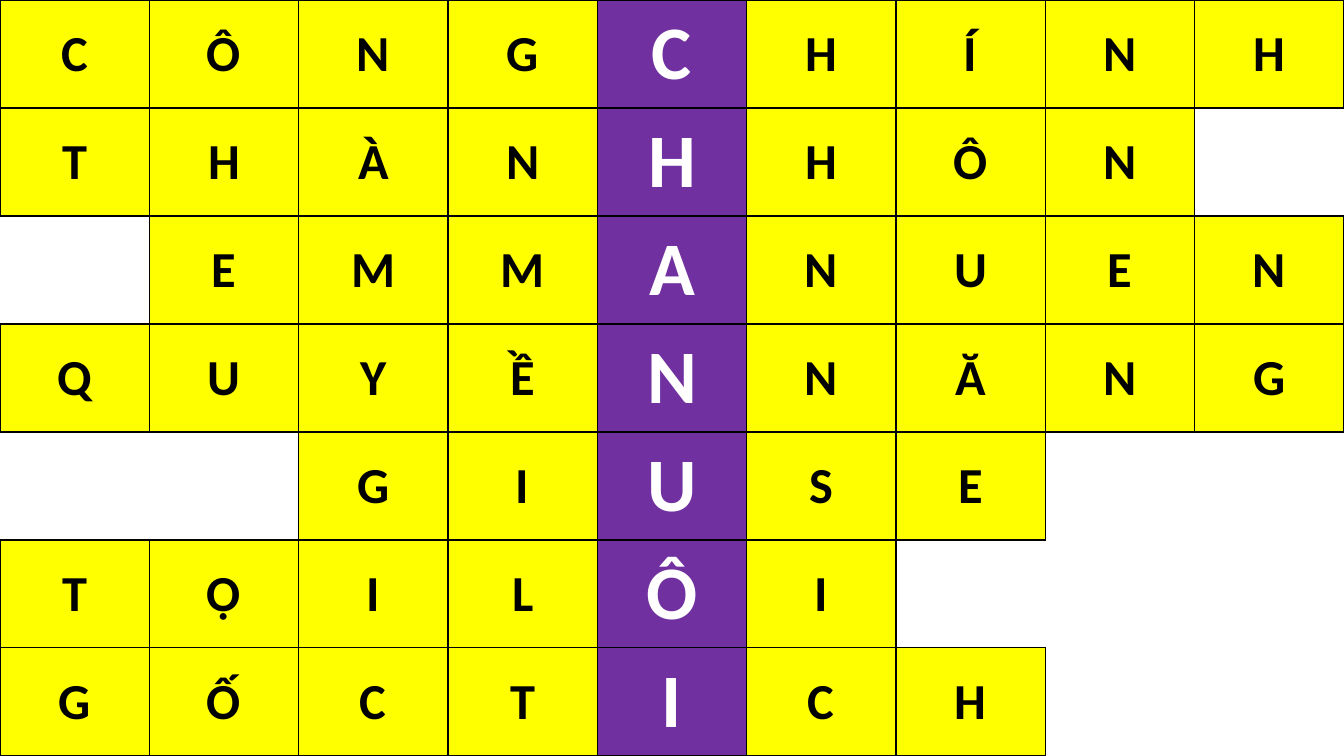
from lxml import etree
from pptx import Presentation
from pptx.dml.color import RGBColor
from pptx.enum.text import MSO_ANCHOR, PP_ALIGN
from pptx.oxml.ns import qn
from pptx.util import Inches, Pt

BLACK = RGBColor(0x00, 0x00, 0x00)
WHITE = RGBColor(0xFF, 0xFF, 0xFF)
YELLOW = RGBColor(0xFF, 0xFF, 0x00)
PURPLE = RGBColor(0x70, 0x30, 0xA0)
MIDDLE = MSO_ANCHOR.MIDDLE
CENTER = PP_ALIGN.CENTER

# Crossword rows; a dot is an empty square
WORDS = [
    "CÔNGCHÍNH",
    "THÀNHHÔN.",
    ".EMMANUEN",
    "QUYỀNNĂNG",
    "..GIUSE..",
    "TỘILÔI...",
    "GỐCTICH..",
]
ROWS, COLUMNS = len(WORDS), len(WORDS[0])
KEY_COLUMN = 4
SIDES = {"a:lnL": (0, -1), "a:lnR": (0, 1), "a:lnT": (-1, 0), "a:lnB": (1, 0)}


def has_letter(row, column):
    return 0 <= row < ROWS and 0 <= column < COLUMNS and WORDS[row][column] != "."


def add_border(cell, side, visible):
    line = etree.SubElement(cell._tc.get_or_add_tcPr(), qn(side), w=str(Pt(1)))
    if visible:
        solid = etree.SubElement(line, qn("a:solidFill"))
        etree.SubElement(solid, qn("a:srgbClr"), val=str(BLACK))
    else:
        etree.SubElement(line, qn("a:noFill"))


deck = Presentation()
deck.slide_width, deck.slide_height = Inches(13.33), Inches(7.5)
page = deck.slides.add_slide(deck.slide_layouts[6])

# Full-page grid
grid = page.shapes.add_table(
    ROWS, COLUMNS, 0, 0, deck.slide_width, deck.slide_height).table
grid.first_row = False
grid.horz_banding = False

for row, word in enumerate(WORDS):
    for column, letter in enumerate(word):
        cell = grid.cell(row, column)
        filled = has_letter(row, column)

        # An edge is drawn wherever a lettered square touches it
        for side, (down, right) in SIDES.items():
            add_border(cell, side, filled or has_letter(row + down, column + right))
        if not filled:
            cell.fill.background()
            continue

        # Letter, larger in the key column
        is_key = column == KEY_COLUMN
        cell.fill.solid()
        cell.fill.fore_color.rgb = PURPLE if is_key else YELLOW
        cell.vertical_anchor = MIDDLE
        cell.text = letter
        para = cell.text_frame.paragraphs[0]
        para.alignment = CENTER
        para.font.name = "Calibri"
        para.font.bold = True
        para.font.size = Pt(54 if is_key else 36)
        para.font.color.rgb = WHITE if is_key else BLACK

deck.save("out.pptx")
